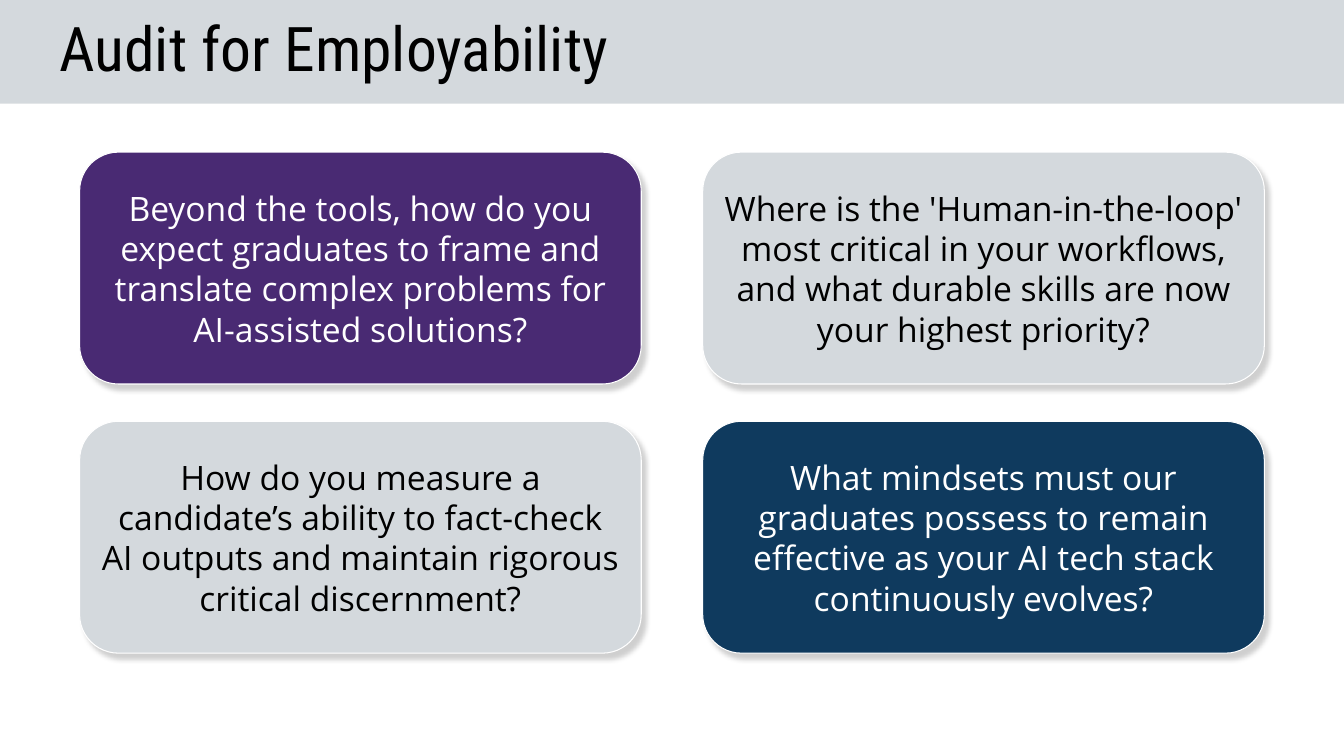
from lxml import etree
from pptx import Presentation
from pptx.dml.color import RGBColor
from pptx.enum.shapes import MSO_SHAPE as SHAPE
from pptx.enum.text import MSO_ANCHOR as ANCHOR, MSO_AUTO_SIZE as AUTO_SIZE, PP_ALIGN as ALIGN
from pptx.oxml import parse_xml
from pptx.oxml.ns import nsdecls
from pptx.util import Inches, Pt

SLIDE_W, SLIDE_H = 13.33, 7.5
BLACK, WHITE, GREY, PURPLE, NAVY = "000000", "FFFFFF", "D4D9DD", "492A73", "0F3A5E"

# Question, fill and text colour, row by row
QUESTIONS = [
    ("Beyond the tools, how do you expect graduates to frame and translate "
     "complex problems for AI-assisted solutions?", PURPLE, WHITE),
    ("Where is the 'Human-in-the-loop' most critical in your workflows, and "
     "what durable skills are now your highest priority?", GREY, BLACK),
    ("How do you measure a candidate’s ability to fact-check AI outputs and "
     "maintain rigorous critical discernment?", GREY, BLACK),
    ("What mindsets must our graduates possess to remain effective as your "
     "AI tech stack continuously evolves?", NAVY, WHITE),
]


def paint(color_format, color):
    color_format.rgb = RGBColor.from_string(color)


def fill_shape(sp, color):
    sp.fill.solid()
    paint(sp.fill.fore_color, color)


def write(tf, text, font, size, color, align):
    tf.text = text
    tf.word_wrap = True
    tf.auto_size = AUTO_SIZE.NONE
    tf.vertical_anchor = ANCHOR.MIDDLE
    p = tf.paragraphs[0]
    p.alignment = align
    r = p.runs[0]
    r.font.name, r.font.size = font, Pt(size)
    paint(r.font.color, color)


def add_soft_shadow(sp):
    sp.shadow.inherit = False
    effects = sp._element.spPr.find("{*}effectLst")
    effects.append(parse_xml(
        f'<a:outerShdw {nsdecls("a")} blurRad="{Pt(3.4)}" dist="{Pt(4.5)}" '
        f'dir="{50 * 60000}" algn="tl" rotWithShape="0">'
        f'<a:srgbClr val="{BLACK}"><a:alpha val="18000"/></a:srgbClr></a:outerShdw>'))


def add_header(slide, x, y, w, h):
    # Band, sent behind the title
    band = slide.shapes.add_shape(SHAPE.RECTANGLE, *map(Inches, (x, y, w, h)))
    band.shadow.inherit = False
    band.line.fill.background()
    fill_shape(band, GREY)
    slide.shapes._spTree.insert(2, band._element)

    # Title
    title = slide.shapes.title
    title.left, title.top = Inches(x + 0.49), Inches(y + 0.08)
    title.width, title.height = Inches(w - 0.98), Inches(h - 0.16)
    write(title.text_frame, "Audit for Employability", "Roboto Condensed", 44, BLACK, ALIGN.LEFT)
    title.text_frame.paragraphs[0].line_spacing = 0.9


def add_card(slide, x, y, w, h, text, fill, color):
    sp = slide.shapes.add_shape(SHAPE.ROUNDED_RECTANGLE, *map(Inches, (x, y, w, h)))
    sp.adjustments[0] = 0.167
    fill_shape(sp, fill)
    paint(sp.line.color, WHITE)
    sp.line.width = Pt(0.75)
    add_soft_shadow(sp)
    tf = sp.text_frame
    tf.margin_left = tf.margin_right = tf.margin_top = tf.margin_bottom = Inches(0.1)
    write(tf, text, "Open Sans", 24, color, ALIGN.CENTER)


def add_question_grid(slide, x, y, w, h, cols=2, rows=2, gap_x=0.61, gap_y=0.37):
    card_w = (w - gap_x * (cols - 1)) / cols
    card_h = (h - gap_y * (rows - 1)) / rows
    for i, question in enumerate(QUESTIONS):
        row, col = divmod(i, cols)
        add_card(slide, x + col * (card_w + gap_x), y + row * (card_h + gap_y),
                 card_w, card_h, *question)


def main():
    prs = Presentation()
    prs.slide_width, prs.slide_height = Inches(SLIDE_W), Inches(SLIDE_H)
    slide = prs.slides.add_slide(prs.slide_layouts[5])
    add_header(slide, 0, 0, SLIDE_W, 1.03)
    add_question_grid(slide, 0.79, 1.51, 11.75, 4.97)
    prs.save("out.pptx")


if __name__ == "__main__":
    main()
